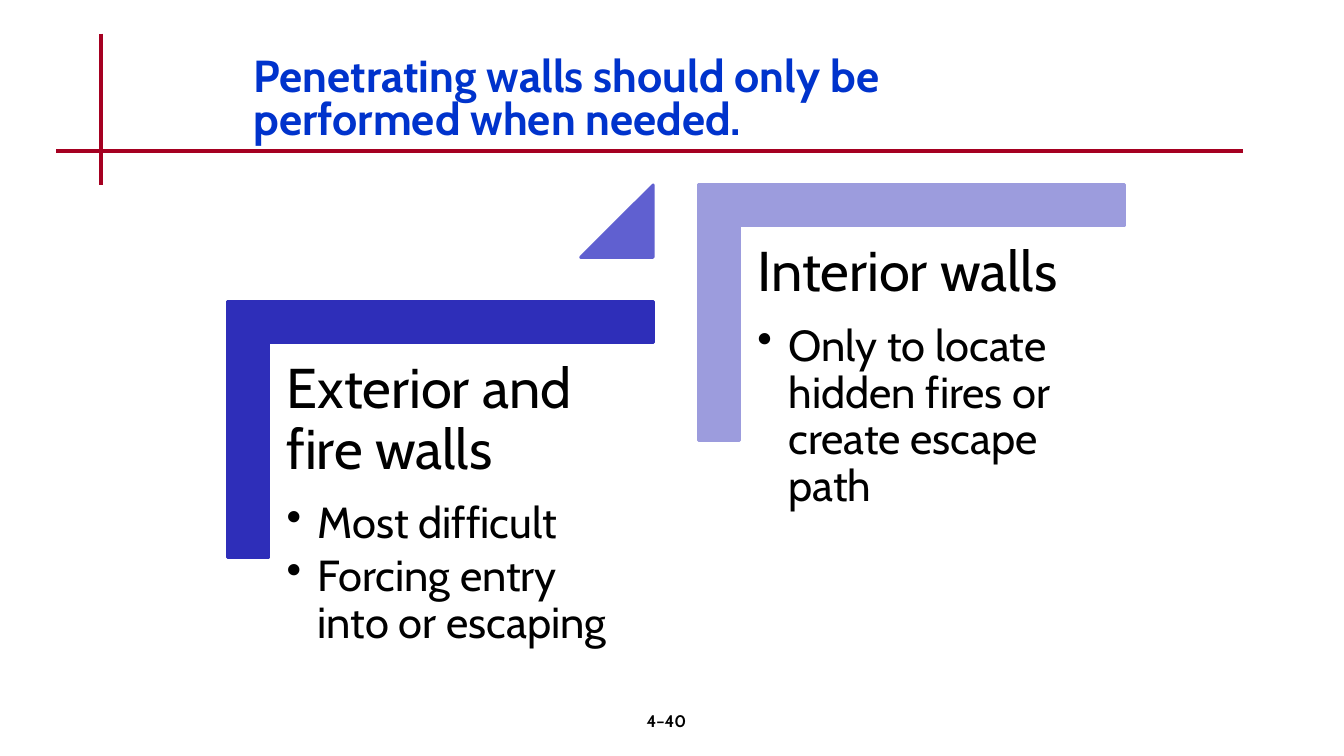
"""Build the slide on penetrating walls as two rising steps."""
from dataclasses import dataclass

from lxml import etree
from pptx import Presentation
from pptx import util as u
from pptx.dml.color import RGBColor
from pptx.enum import shapes, text
from pptx.oxml.ns import qn

TITLE = "Penetrating walls should only be performed when needed."
PAGE_NUMBER = "4–40"
STEPS = [
    ("Exterior and fire walls", ["Most difficult", "Forcing entry into or escaping"], "2E2EB9"),
    ("Interior walls", ["Only to locate hidden fires or create escape path"], "9C9CDD"),
]


@dataclass(frozen=True)
class Theme:
    font: str = "Cabin"
    title: str = "0033CC"
    body: str = "000000"
    rule: str = "A50021"
    triangle: str = "6060D0"
    title_size: int = 32
    heading_size: int = 40
    bullet_size: int = 31
    number_size: int = 12
    rule_width: int = 3
    outline_width: int = 2


THEME = Theme()
CELL = 1 / 12
RULES = [(12, 4, 12, 22), (6.7, 18, 148, 18)]
TITLE_BOX = (29, 6, 94, 12)
NUMBER_BOX = (62.64, 84, 33.36, 6)
FIRST_STEP = (27.1, 35.9)
STEP_SHIFT = (56.05, -13.9)
CORNER = (50.64, 30.48)
CORNER_BAR = 0.161
TEXT_OFFSET = 5
TEXT_SIZE = (45.7, 40.1)
TEXT_INSET = 2
BULLET_INDENT = 0.31
TRIANGLE = 8.64


def cells(*counts):
    return [u.Inches(count * CELL) for count in counts]


def add_rule(page, ends):
    rule = page.shapes.add_connector(shapes.MSO_CONNECTOR.STRAIGHT, *cells(*ends))
    rule.line.color.rgb = RGBColor.from_string(THEME.rule)
    rule.line.width = u.Pt(THEME.rule_width)
    etree.SubElement(rule._element.spPr, qn("a:effectLst"))


def add_block(page, preset, place, color, adjustments):
    block = page.shapes.add_shape(preset, *cells(*place))
    block.shadow.inherit = False
    block.fill.solid()
    block.fill.fore_color.rgb = block.line.color.rgb = RGBColor.from_string(color)
    block.line.width = u.Pt(THEME.outline_width)
    for index, value in enumerate(adjustments):
        block.adjustments[index] = value
    return block


def add_text(page, place):
    box = page.shapes.add_textbox(*cells(*place))
    box.text_frame.word_wrap = True
    return box.text_frame


def write(para, words, size, color=THEME.body, bold=False):
    para.text = words
    for span in para.runs:
        span.font.name = THEME.font
        span.font.size = u.Pt(size)
        span.font.bold = bold
        span.font.color.rgb = RGBColor.from_string(color)


def add_bullet(para):
    props = para._p.get_or_add_pPr()
    props.set("marL", str(u.Inches(BULLET_INDENT)))
    props.set("indent", str(-u.Inches(BULLET_INDENT)))
    etree.SubElement(props, qn("a:buChar"), char="•")


def add_step(page, left, top, heading, bullets, color):
    width, height = CORNER
    turn = (width - height) / 2
    corner = add_block(page, shapes.MSO_SHAPE.CORNER,
                       (left + turn, top - turn, height, width), color, [CORNER_BAR] * 2)
    corner.rotation = 90
    frame = add_text(page, (left + TEXT_OFFSET, top + TEXT_OFFSET, *TEXT_SIZE))
    frame.margin_left, frame.margin_top, frame.margin_right, frame.margin_bottom = cells(*[TEXT_INSET] * 4)
    lines = [(heading, THEME.heading_size, 0.35)]
    lines += [(bullet, THEME.bullet_size, 0.15) for bullet in bullets]
    for index, (words, size, gap) in enumerate(lines):
        para = frame.add_paragraph() if index else frame.paragraphs[0]
        if index:
            add_bullet(para)
        para.line_spacing = 0.9
        para.space_after = u.Pt(size * gap)
        write(para, words, size)


def main():
    deck = Presentation()
    deck.slide_width, deck.slide_height = u.Inches(13.33), u.Inches(7.5)
    page = deck.slides.add_slide(deck.slide_layouts[6])
    for ends in RULES:
        add_rule(page, ends)

    title = add_text(page, TITLE_BOX)
    title.vertical_anchor = text.MSO_ANCHOR.MIDDLE
    title.paragraphs[0].line_spacing = 0.8
    write(title.paragraphs[0], TITLE, THEME.title_size, THEME.title, True)

    number = add_text(page, NUMBER_BOX).paragraphs[0]
    number.alignment = text.PP_ALIGN.CENTER
    write(number, PAGE_NUMBER, THEME.number_size, bold=True)

    left, top = FIRST_STEP
    across, up = STEP_SHIFT
    for index, step in enumerate(STEPS):
        add_step(page, left + index * across, top + index * up, *step)
    add_block(page, shapes.MSO_SHAPE.ISOSCELES_TRIANGLE,
              (left + CORNER[0] - TRIANGLE, top + up, TRIANGLE, TRIANGLE), THEME.triangle, [1])
    deck.save("out.pptx")


if __name__ == "__main__":
    main()
